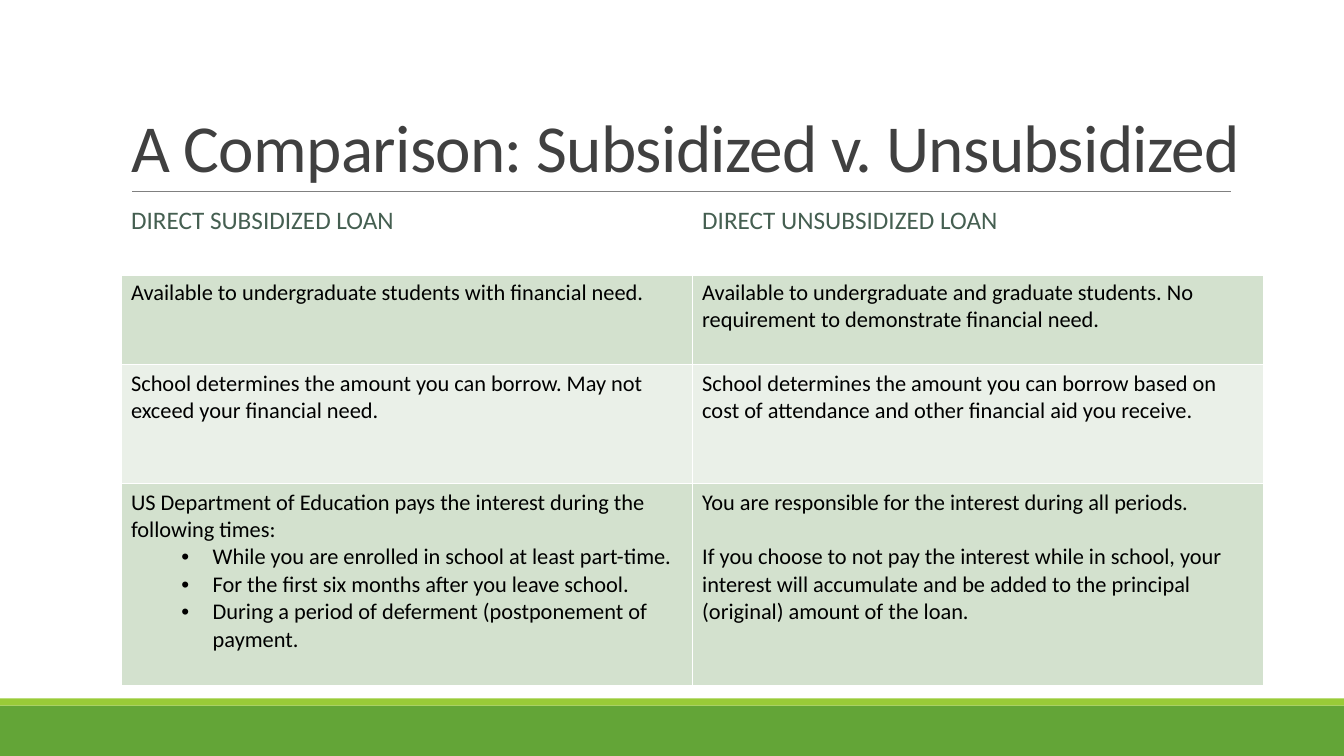
from lxml import etree
from pptx import Presentation
from pptx.dml.color import RGBColor
from pptx.enum.shapes import MSO_CONNECTOR, MSO_SHAPE
from pptx.enum.text import MSO_ANCHOR, MSO_AUTO_SIZE, PP_ALIGN
from pptx.oxml.ns import qn
from pptx.util import Inches, Pt

RECTANGLE = MSO_SHAPE.RECTANGLE
STRAIGHT = MSO_CONNECTOR.STRAIGHT
BOTTOM = MSO_ANCHOR.BOTTOM
LEFT = PP_ALIGN.LEFT
NO_FIT = MSO_AUTO_SIZE.NONE
TITLE_ONLY = 5

FONT = "Calibri"
WHITE = "FFFFFF"
HEADER_FORMAT = {"name": FONT, "size": Pt(18), "bold": False}
BODY_FORMAT = {"name": FONT, "size": Pt(16), "bold": False}
TITLE_FORMAT = {"name": FONT, "size": Pt(48), "bold": False}

BANDS = [(7, 0.5, "63A537"), (6.93, 0.07, "99CB38")]
COLUMN_WIDTH = 5.665
ROW_HEIGHTS = [0.73, 0.9, 1.18, 2]
ROW_FILLS = [WHITE, "D3E1CE", "EAF0E8", "D3E1CE"]

# Each cell is a list of (text, kind) paragraphs.
ROWS = [
    ([("DIRECT SUBSIDIZED LOAN", "plain")],
     [("DIRECT UNSUBSIDIZED LOAN", "plain")]),
    ([("Available to undergraduate students with financial need.", "plain")],
     [("Available to undergraduate and graduate students. No requirement to "
       "demonstrate financial need.", "plain")]),
    ([("School determines the amount you can borrow. May not exceed your "
       "financial need.", "plain")],
     [("School determines the amount you can borrow based on cost of "
       "attendance and other financial aid you receive.", "plain")]),
    ([("US Department of Education pays the interest during the following "
       "times:", "plain"),
      ("While you are enrolled in school at least part-time.", "bullet"),
      ("For the first six months after you leave school.", "bullet"),
      ("During a period of deferment (postponement of payment.", "bullet")],
     [("You are responsible for the interest during all periods.", "plain"),
      ("If you choose to not pay the interest while in school, your interest "
       "will accumulate and be added to the principal (original) amount of "
       "the loan.", "spaced")]),
]


def rgb(color):
    return RGBColor.from_string(color)


def add_span(para, text, color, formats):
    span = para.add_run()
    span.text = text
    for name, value in formats.items():
        setattr(span.font, name, value)
    span.font.color.rgb = rgb(color)
    return span


def set_title(slide, text):
    title = slide.shapes.title
    place = {"left": 1.2, "top": 0.31, "width": 11.21, "height": 1.59}
    for name, value in place.items():
        setattr(title, name, Inches(value))
    frame = title.text_frame
    frame.word_wrap = True
    frame.auto_size = NO_FIT
    frame.vertical_anchor = BOTTOM
    para = frame.paragraphs[0]
    para.alignment = LEFT
    para.line_spacing = 0.85
    span = add_span(para, text, "404040", TITLE_FORMAT)
    span._r.get_or_add_rPr().set("spc", "-50")


def add_band(slide, top, height, color):
    band = slide.shapes.add_shape(
        RECTANGLE, 0, Inches(top), Inches(13.33), Inches(height))
    band.shadow.inherit = False
    band.fill.solid()
    band.fill.fore_color.rgb = rgb(color)
    band.line.fill.background()


def add_rule(slide, left, right, top):
    rule = slide.shapes.add_connector(
        STRAIGHT, Inches(left), Inches(top), Inches(right), Inches(top))
    rule.line.color.rgb = rgb("808080")
    rule.line.width = Pt(0.5)
    etree.SubElement(rule._element.spPr, qn("a:effectLst"))


def add_bullet(para):
    properties = para._p.get_or_add_pPr()
    properties.set("marL", str(Inches(0.81)))
    properties.set("indent", str(Inches(-0.31)))
    etree.SubElement(properties, qn("a:buFont"), typeface="Arial")
    etree.SubElement(properties, qn("a:buChar"), char="•")


def set_borders(cell, widths):
    """Draw white borders; widths maps a side (L, R, T, B) to points."""
    properties = cell._tc.get_or_add_tcPr()
    for side, width in widths.items():
        line = etree.SubElement(properties, qn(f"a:ln{side}"), w=str(Pt(width)))
        fill = etree.SubElement(line, qn("a:solidFill"))
        etree.SubElement(fill, qn("a:srgbClr"), val=WHITE)


def fill_cell(cell, paragraphs, color, formats):
    frame = cell.text_frame
    for index, (text, kind) in enumerate(paragraphs):
        para = frame.add_paragraph() if index else frame.paragraphs[0]
        para.alignment = LEFT
        if kind == "bullet":
            para.level = 1
            add_bullet(para)
        elif kind == "spaced":
            para.space_before = Pt(19.5)
        add_span(para, text, color, formats)


def add_comparison(slide):
    table = slide.shapes.add_table(
        len(ROWS), 2, Inches(1.2), Inches(1.99),
        Inches(2 * COLUMN_WIDTH), Inches(sum(ROW_HEIGHTS))).table
    table.first_row = False
    table.horz_banding = False
    for column in table.columns:
        column.width = Inches(COLUMN_WIDTH)
    for row_index, row in enumerate(ROWS):
        table.rows[row_index].height = Inches(ROW_HEIGHTS[row_index])
        is_header = row_index == 0
        color = "455F51" if is_header else "000000"
        formats = HEADER_FORMAT if is_header else BODY_FORMAT
        widths = {"L": 1, "R": 1, "T": 3 if row_index == 1 else 1,
                  "B": 3 if is_header else 1}
        for column_index, paragraphs in enumerate(row):
            cell = table.cell(row_index, column_index)
            set_borders(cell, widths)
            cell.fill.solid()
            cell.fill.fore_color.rgb = rgb(ROW_FILLS[row_index])
            fill_cell(cell, paragraphs, color, formats)


def main():
    deck = Presentation()
    deck.slide_width = Inches(13.33)
    deck.slide_height = Inches(7.5)
    slide = deck.slides.add_slide(deck.slide_layouts[TITLE_ONLY])
    for top, height, color in BANDS:
        add_band(slide, top, height, color)
    add_rule(slide, 1.31, 12.21, 1.9)
    set_title(slide, "A Comparison: Subsidized v. Unsubsidized")
    add_comparison(slide)
    deck.save("out.pptx")


if __name__ == "__main__":
    main()
